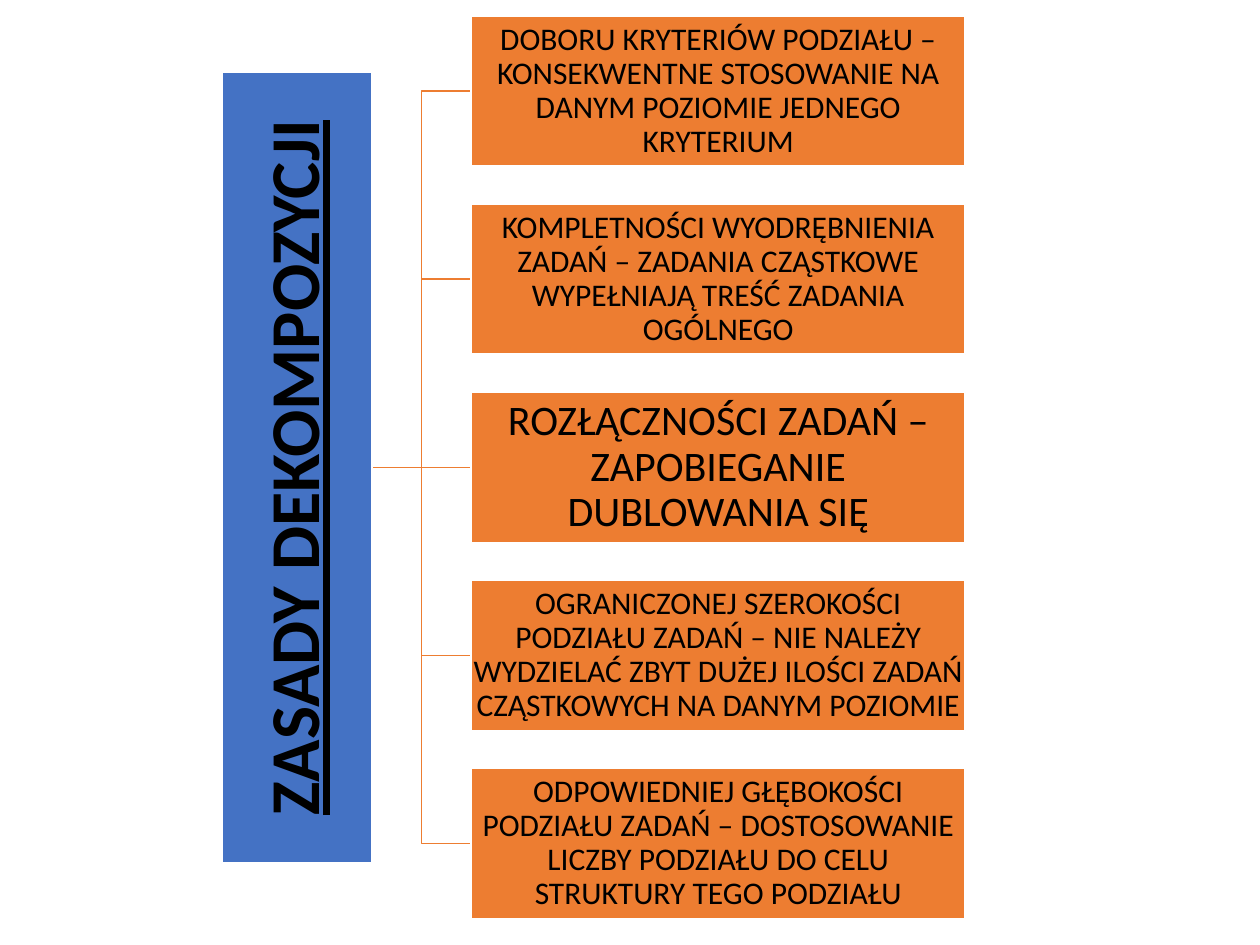
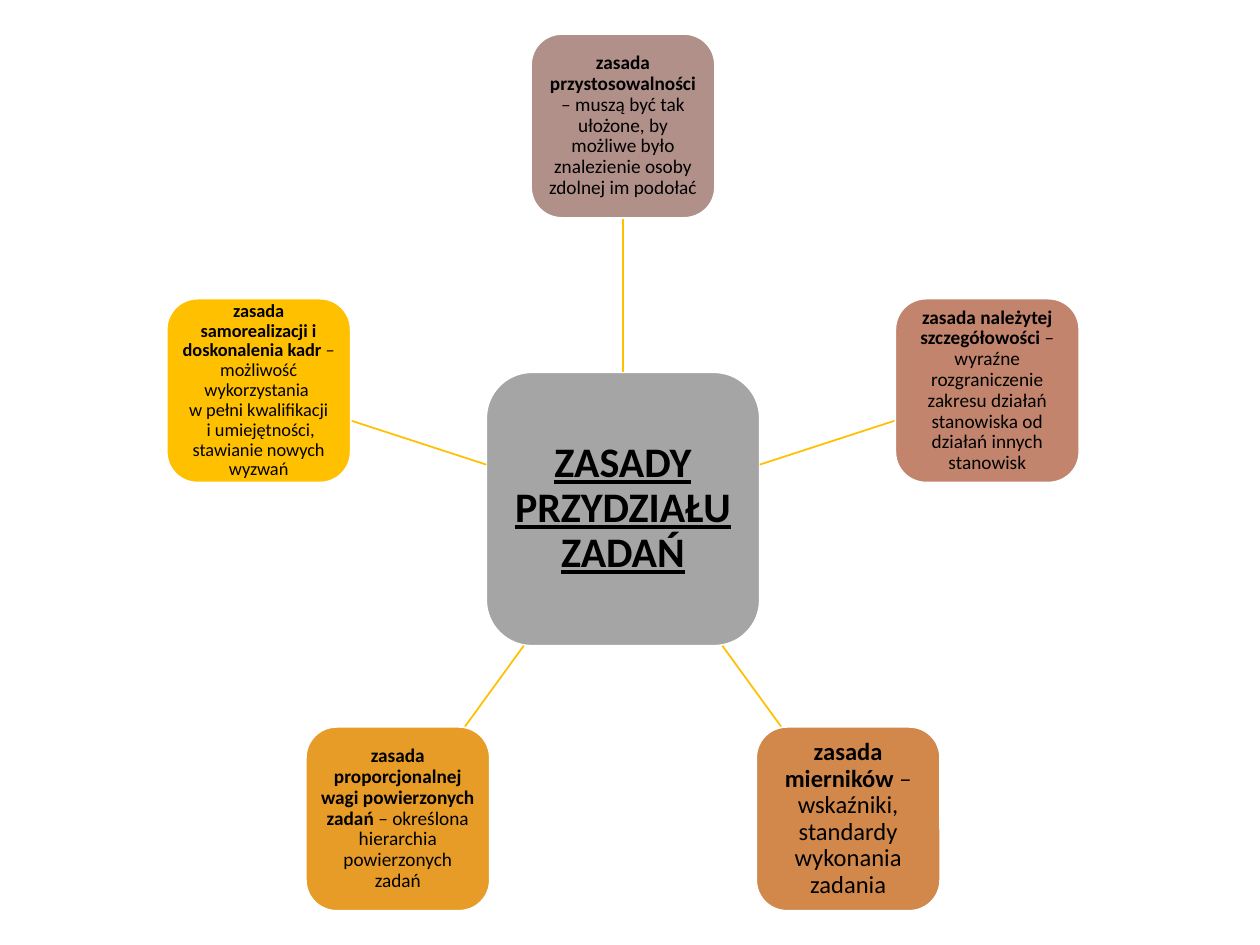
from math import cos, radians, sin

from lxml import etree
from pptx import Presentation
from pptx.dml.color import RGBColor
from pptx.enum.shapes import MSO_CONNECTOR as Link, MSO_SHAPE as Shape
from pptx.enum.text import MSO_ANCHOR as Anchor, PP_ALIGN as Align
from pptx.oxml.ns import qn
from pptx.util import Inches, Pt

BLACK = RGBColor(0x00, 0x00, 0x00)
WHITE = RGBColor(0xFF, 0xFF, 0xFF)
BLUE = RGBColor(0x44, 0x72, 0xC4)
ORANGE = RGBColor(0xED, 0x7D, 0x31)
GRAY = RGBColor(0xA5, 0xA5, 0xA5)
GOLD = RGBColor(0xFF, 0xC0, 0x00)
MAUVE = RGBColor(0xB1, 0x90, 0x89)
CLAY = RGBColor(0xC2, 0x84, 0x6C)
COPPER = RGBColor(0xD2, 0x88, 0x4A)
AMBER = RGBColor(0xE6, 0x9C, 0x27)
FONT = "Calibri"

RULES = [
    ("DOBORU KRYTERIÓW PODZIAŁU – KONSEKWENTNE STOSOWANIE NA DANYM "
     "POZIOMIE JEDNEGO KRYTERIUM", 18),
    ("KOMPLETNOŚCI WYODRĘBNIENIA ZADAŃ – ZADANIA CZĄSTKOWE WYPEŁNIAJĄ "
     "TREŚĆ ZADANIA OGÓLNEGO", 18),
    ("ROZŁĄCZNOŚCI ZADAŃ – ZAPOBIEGANIE DUBLOWANIA SIĘ", 24),
    ("OGRANICZONEJ SZEROKOŚCI PODZIAŁU ZADAŃ – NIE NALEŻY WYDZIELAĆ ZBYT "
     "DUŻEJ ILOŚCI ZADAŃ CZĄSTKOWYCH NA DANYM POZIOMIE", 18),
    ("ODPOWIEDNIEJ GŁĘBOKOŚCI PODZIAŁU ZADAŃ – DOSTOSOWANIE LICZBY "
     "PODZIAŁU DO CELU STRUKTURY TEGO PODZIAŁU", 18),
]
NODES = [
    ("zasada przystosowalności ",
     "– muszą być tak ułożone, by możliwe było znalezienie osoby zdolnej "
     "im podołać", 11, MAUVE),
    ("zasada należytej szczegółowości ",
     "– wyraźne rozgraniczenie zakresu działań stanowiska od działań innych "
     "stanowisk", 11, CLAY),
    ("zasada mierników ", "– wskaźniki, standardy wykonania zadania",
     14, COPPER),
    ("zasada proporcjonalnej wagi powierzonych zadań ",
     "– określona hierarchia powierzonych zadań", 11, AMBER),
    ("zasada samorealizacji i doskonalenia kadr ",
     "– możliwość wykorzystania \nw pełni kwalifikacji\n i umiejętności, "
     "stawianie nowych wyzwań", 10.5, GOLD),
]


def add_box(slide, kind, box, fill, inset):
    shape = slide.shapes.add_shape(kind, *map(Inches, box))
    shape.shadow.inherit = False
    shape.fill.solid()
    shape.fill.fore_color.rgb = fill
    shape.line.color.rgb = WHITE
    shape.line.width = Pt(1)
    frame = shape.text_frame
    frame.word_wrap = True
    frame.vertical_anchor = Anchor.MIDDLE
    frame.margin_left = frame.margin_right = Inches(inset)
    frame.margin_top = frame.margin_bottom = Inches(inset)
    return shape


def add_text(shape, text, size, title=False):
    para = shape.text_frame.paragraphs[0]
    para.text = text
    para.alignment = Align.CENTER
    para.line_spacing = 0.9
    font = para.font
    font.name, font.size, font.color.rgb = FONT, Pt(size), BLACK
    if title:
        font.bold = font.underline = True
    return para


def add_line(slide, kind, start, end, color):
    line = slide.shapes.add_connector(kind, *map(Inches, (*start, *end)))
    line.line.color.rgb = color
    line.line.width = Pt(1)
    etree.SubElement(line._element.spPr, qn("a:effectLst"))


def draw_tree(slide, box):
    left, top, width, height = box
    bar, gap, card = 1.19, 0.79, 3.92
    step = (height - bar) / (len(RULES) - 1)
    mid = top + height / 2
    root = left + bar
    edge = left + width - card
    for row in range(len(RULES)):
        goal = top + bar / 2 + row * step
        kind = Link.STRAIGHT if row == len(RULES) // 2 else Link.ELBOW
        add_line(slide, kind, (root, mid), (root + gap, goal), ORANGE)

    span = 6.28
    head = add_box(slide, Shape.RECTANGLE,
                   (left + (bar - span) / 2, mid - bar / 2, span, bar),
                   BLUE, 0.03)
    head.rotation = 270
    add_text(head, "ZASADY DEKOMPOZYCJI", 40, title=True)
    for row, (text, size) in enumerate(RULES):
        rule = add_box(slide, Shape.RECTANGLE,
                       (edge, top + row * step, card, bar), ORANGE, 0.01)
        add_text(rule, text, size)


def draw_node(slide, box, head, tail, size, fill):
    node = add_box(slide, Shape.ROUNDED_RECTANGLE, box, fill, 0.03)
    para = add_text(node, head, size)
    para.runs[0].font.bold = True
    for row, part in enumerate(tail.split("\n")):
        if row:
            para.add_line_break()
        para.add_run().text = part


def draw_wheel(slide, box):
    left, top, width, _ = box
    hub, side, ring = 2.17, 1.46, 3.04
    mid_x, mid_y = left + width / 2, top + side / 2 + ring
    core = add_box(slide, Shape.ROUNDED_RECTANGLE,
                   (mid_x - hub / 2, mid_y - hub / 2, hub, hub), GRAY, 0.07)
    add_text(core, "ZASADY PRZYDZIAŁU ZADAŃ", 24, title=True)
    for index, node in enumerate(NODES):
        angle = radians(index * 360 / len(NODES))
        dx, dy = sin(angle), -cos(angle)
        reach = max(abs(dx), abs(dy))
        near, far = hub / 2 / reach, ring - side / 2 / reach
        start, end = [(mid_x + dx * dist, mid_y + dy * dist)
                      for dist in (near, far)]
        add_line(slide, Link.STRAIGHT, start, end, GOLD)
        place = (mid_x + dx * ring - side / 2,
                 mid_y + dy * ring - side / 2, side, side)
        draw_node(slide, place, *node)


def main():
    deck = Presentation()
    deck.slide_width, deck.slide_height = Inches(10), Inches(7.5)
    blank = deck.slide_layouts[6]
    draw_tree(deck.slides.add_slide(blank), (1.76, 0.13, 5.9, 7.16))
    draw_wheel(deck.slides.add_slide(blank), (1.32, 0.27, 7.25, 6.96))
    deck.save("out.pptx")


if __name__ == "__main__":
    main()
